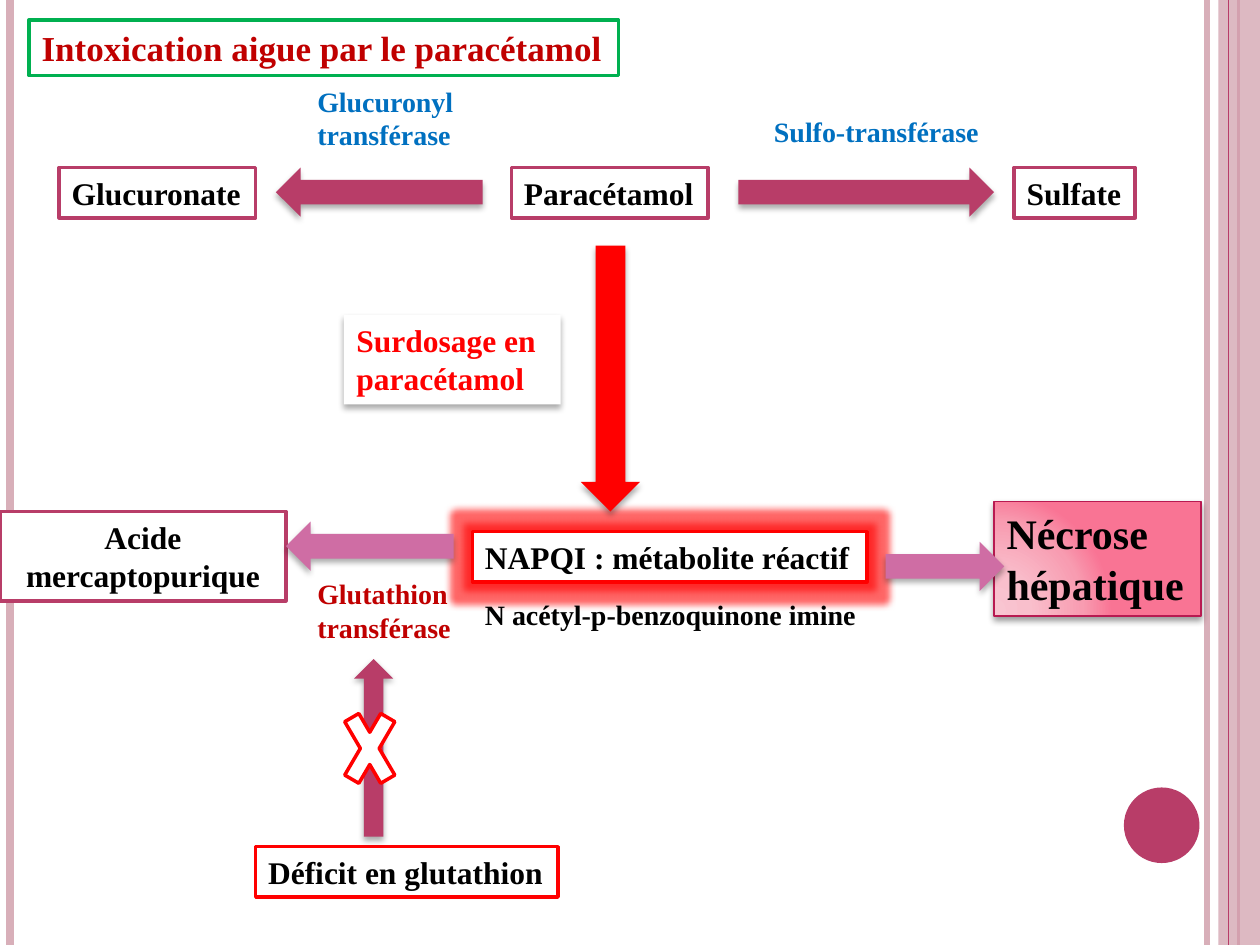
from lxml import etree
from pptx import Presentation
from pptx.dml.color import RGBColor
from pptx.enum.shapes import MSO_CONNECTOR, MSO_SHAPE
from pptx.enum.text import MSO_ANCHOR, MSO_AUTO_SIZE, PP_ALIGN
from pptx.oxml import parse_xml
from pptx.oxml.ns import qn
from pptx.util import Inches, Pt

NS = 'xmlns:a="http://schemas.openxmlformats.org/drawingml/2006/main"'
SHADOW = ('<a:outerShdw {ns} blurRad="{blur}" dist="{dist}" dir="5400000" rotWithShape="0">'
          '<a:srgbClr val="000000"><a:alpha val="{alpha}000"/></a:srgbClr></a:outerShdw>')
SOFT_SHADOW = SHADOW.format(ns=NS, blur=Pt(3.5), dist=Pt(2.2), alpha=32)
DEEP_SHADOW = SHADOW.format(ns=NS, blur=Pt(4), dist=Pt(2), alpha=40)
RED_GLOW = (f'<a:glow {NS} rad="{Pt(8)}"><a:srgbClr val="FF0000">'
            '<a:alpha val="60000"/></a:srgbClr></a:glow>')

ROSE, PALE_ROSE, PINK = "B83D68", "D8AFB9", "CF6DA4"
RED, DARK_RED, BLUE, GREEN = "FF0000", "C00000", "0070C0", "00B050"
BLACK, WHITE = "000000", "FFFFFF"


def paint(shape, fill=None, line=None, width=2, effect=None):
    for part, color in ((shape.fill, fill), (shape.line.fill, line)):
        if color:
            part.solid()
            part.fore_color.rgb = RGBColor.from_string(color)
        else:
            part.background()
    if line:
        shape.line.width = Pt(width)
    shape.shadow.inherit = False
    if effect:
        shape._element.spPr.find(qn("a:effectLst")).append(parse_xml(effect))


def write(shape, text, size=18, color=BLACK, wrap=True, align=PP_ALIGN.LEFT,
          fit=MSO_AUTO_SIZE.SHAPE_TO_FIT_TEXT):
    frame = shape.text_frame
    frame.text = text
    settings = {"word_wrap": wrap, "auto_size": fit, "vertical_anchor": MSO_ANCHOR.TOP,
                "margin_left": Inches(0.1), "margin_right": Inches(0.1),
                "margin_top": Inches(0.05), "margin_bottom": Inches(0.05)}
    for name, value in settings.items():
        setattr(frame, name, value)
    for paragraph in frame.paragraphs:
        paragraph.alignment = align
        for run in paragraph.runs:
            for name, value in {"name": "Times New Roman", "size": Pt(size), "bold": True}.items():
                setattr(run.font, name, value)
            run.font.color.rgb = RGBColor.from_string(color)


prs = Presentation()
prs.slide_width, prs.slide_height = Inches(10), Inches(7.5)
slide = prs.slides.add_slide(prs.slide_layouts[5])
shapes = slide.shapes

title = shapes.title
title.left, title.top, title.width, title.height = map(Inches, (0.23, 0.16, 4.68, 0.44))
paint(title, WHITE, GREEN)
write(title, "Intoxication aigue par le paracétamol", 20, DARK_RED, fit=MSO_AUTO_SIZE.NONE)

for x, color, width in ((9.58, PALE_ROSE, 3), (0.08, PALE_ROSE, 4.5),
                        (9.83, ROSE, 1.5), (9.75, ROSE, 0.75)):
    if x == 9.75:
        band = shapes.add_shape(MSO_SHAPE.RECTANGLE, Inches(9.67), 0, Inches(0.33), Inches(7.5))
        paint(band, PALE_ROSE)
        band_color = band._element.spPr.find(".//" + qn("a:srgbClr"))
        etree.SubElement(band_color, qn("a:alpha"), val="87000")
    stripe = shapes.add_connector(MSO_CONNECTOR.STRAIGHT, Inches(x), 0, Inches(x), Inches(7.5))
    stripe.line.color.rgb = RGBColor.from_string(color)
    stripe.line.width = Pt(width)
    etree.SubElement(stripe._element.spPr, qn("a:effectLst"))

disc = shapes.add_shape(MSO_SHAPE.OVAL, Inches(8.92), Inches(6.25), Inches(0.6), Inches(0.6))
paint(disc, ROSE)

boxes = [
    ("Glucuronate", (0.47, 1.33, 1.56, 0.4), {"line": ROSE}, {"wrap": False}),
    ("Paracétamol", (4.06, 1.33, 1.56, 0.4), {"line": ROSE}, {"wrap": False}),
    ("Sulfate", (8.05, 1.33, 0.96, 0.4), {"line": ROSE}, {"wrap": False}),
    ("NAPQI : métabolite réactif", (3.75, 4.22, 3.13, 0.4),
     {"line": RED, "effect": RED_GLOW}, {}),
    ("Acide\nmercaptopurique", (0, 4.06, 2.27, 0.71), {"line": ROSE},
     {"align": PP_ALIGN.CENTER}),
    ("Surdosage en paracétamol", (2.73, 2.5, 1.72, 0.71),
     {"effect": SOFT_SHADOW}, {"color": RED}),
    ("Déficit en glutathion", (2.03, 6.72, 2.4, 0.4), {"line": RED}, {"wrap": False}),
    ("Nécrose\nhépatique", (7.89, 3.98, 1.64, 0.91),
     {"fill": None, "line": "B81A51", "width": 1, "effect": DEEP_SHADOW}, {"size": 24}),
]
for text, place, look, style in boxes:
    box = shapes.add_shape(MSO_SHAPE.RECTANGLE, *map(Inches, place))
    paint(box, **{"fill": WHITE, **look})
    write(box, text, **style)

necrosis = box._element.spPr
stops = "".join(f'<a:gs pos="{pos}000"><a:srgbClr val="{color}"/></a:gs>' for pos, color in
                ((0, "F9C5D1"), (30, "F9BFCC"), (75, "F89CB1"), (100, "F97494")))
necrosis.replace(necrosis.find(qn("a:noFill")), parse_xml(
    f'<a:gradFill {NS} rotWithShape="1"><a:gsLst>{stops}</a:gsLst><a:path path="circle">'
    '<a:fillToRect l="5000" t="100000" r="120000" b="10000"/></a:path></a:gradFill>'))

arrows = [
    (MSO_SHAPE.DOWN_ARROW, (2.81, 5.23, 0.31, 1.41), 180, ROSE),
    (MSO_SHAPE.RIGHT_ARROW, (5.86, 1.33, 2.03, 0.39), 0, ROSE),
    (MSO_SHAPE.RIGHT_ARROW, (2.19, 1.33, 1.64, 0.39), 180, ROSE),
    (MSO_SHAPE.RIGHT_ARROW, (3.79, 2.77, 2.11, 0.47), 90, RED),
    (MSO_SHAPE.RIGHT_ARROW, (2.27, 4.14, 1.33, 0.39), 180, PINK),
    (MSO_SHAPE.RIGHT_ARROW, (7.03, 4.3, 0.94, 0.39), 0, PINK),
]
for kind, place, angle, color in arrows:
    arrow = shapes.add_shape(kind, *map(Inches, place))
    arrow.rotation = angle
    paint(arrow, color, effect=SOFT_SHADOW)

cross = shapes.add_shape(MSO_SHAPE.MATH_MULTIPLY, *map(Inches, (2.66, 5.47, 0.55, 0.94)))
paint(cross, WHITE, RED)

labels = [
    ("Glutathion\ntransférase", (2.42, 4.53, 1.41, 0.64), {"color": DARK_RED}),
    ("Glucuronyl\ntransférase", (2.42, 0.62, 1.34, 0.64), {"color": BLUE, "wrap": False}),
    ("Sulfo-transférase", (5.86, 0.86, 2.19, 0.37), {"color": BLUE, "align": PP_ALIGN.CENTER}),
    ("N acétyl-p-benzoquinone imine", (3.75, 4.69, 3.19, 0.37), {"wrap": False}),
]
for text, place, style in labels:
    write(shapes.add_textbox(*map(Inches, place)), text, 16, **style)

prs.save("out.pptx")
